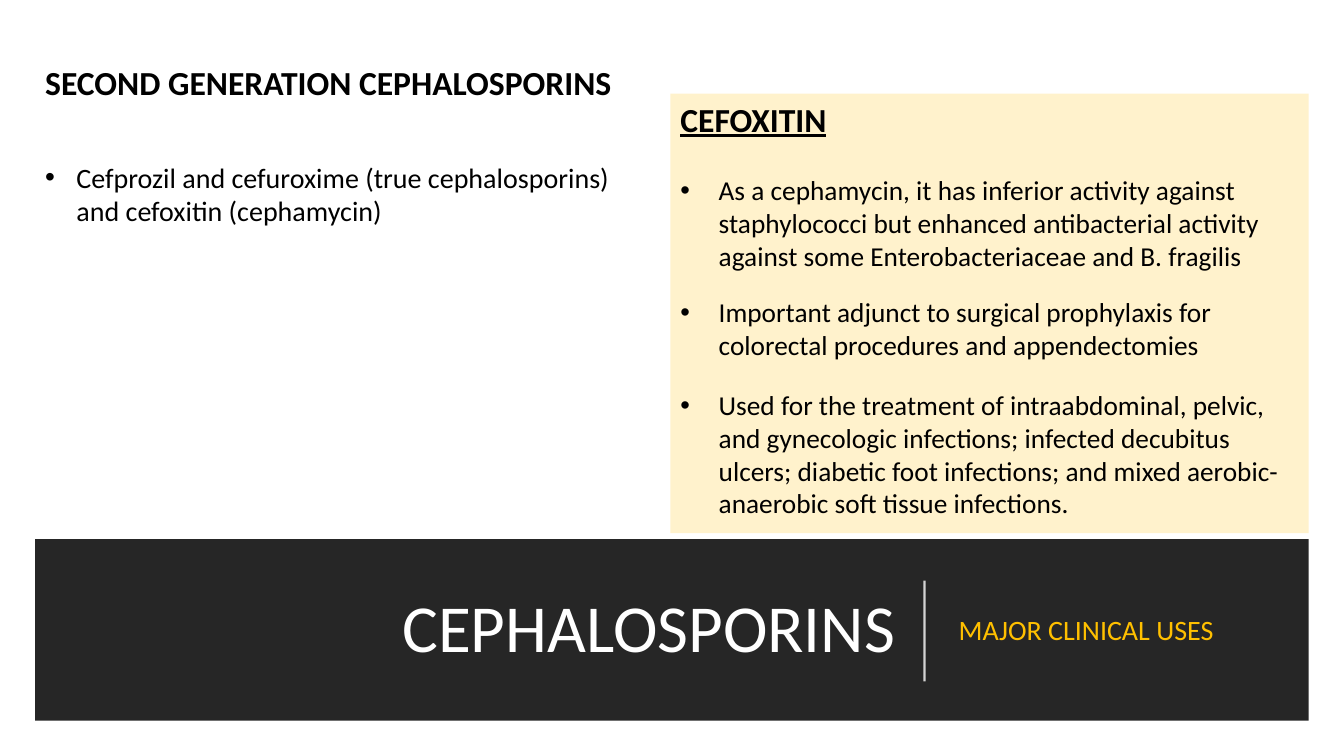
from lxml import etree
from pptx import Presentation
from pptx.dml.color import RGBColor
from pptx.enum.shapes import MSO_CONNECTOR, MSO_SHAPE
from pptx.enum.text import MSO_ANCHOR, MSO_AUTO_SIZE, PP_ALIGN
from pptx.oxml.ns import qn
from pptx.util import Inches, Pt

RECT, STRAIGHT = MSO_SHAPE.RECTANGLE, MSO_CONNECTOR.STRAIGHT
TOP, MIDDLE = MSO_ANCHOR.TOP, MSO_ANCHOR.MIDDLE
LEFT, RIGHT = PP_ALIGN.LEFT, PP_ALIGN.RIGHT
GROW, FIXED = MSO_AUTO_SIZE.SHAPE_TO_FIT_TEXT, MSO_AUTO_SIZE.NONE

BLACK, WHITE, BAND, CREAM, GOLD = "000000", "FFFFFF", "262626", "FFF2CC", "FFC000"
FONT = "Calibri"

# Each paragraph: (text, font values, paragraph values, bullet indent in inches)
TIGHT = {"line_spacing": 0.9}
TITLE = [("CEPHALOSPORINS", {"size": Pt(48)}, {**TIGHT, "alignment": RIGHT}, 0)]
SUBTITLE = [("MAJOR CLINICAL USES", {"size": Pt(20)},
             {**TIGHT, "space_before": Pt(10), "space_after": Pt(6)}, 0)]
GENERATION = [("SECOND GENERATION CEPHALOSPORINS", {"size": Pt(24), "bold": True},
               {**TIGHT, "space_before": Pt(10)}, 0)]
MEMBERS = [("Cefprozil and cefuroxime (true cephalosporins) and cefoxitin (cephamycin)",
            {"size": Pt(20)}, {}, 0.31)]
CEFOXITIN_USES = [
    ("As a cephamycin, it has inferior activity against staphylococci but enhanced "
     "antibacterial activity against some Enterobacteriaceae and B. fragilis", 24.4),
    ("Important adjunct to surgical prophylaxis for colorectal procedures and "
     "appendectomies", 17),
    ("Used for the treatment of intraabdominal, pelvic, and gynecologic infections; "
     "infected decubitus ulcers; diabetic foot infections; and mixed aerobic-anaerobic "
     "soft tissue infections.", 19.5),
]
CEFOXITIN = [("CEFOXITIN", {"size": Pt(24), "bold": True, "underline": True}, {}, 0)] + [
    (use, {"size": Pt(19.5)}, {"space_before": Pt(gap)}, 0.38)
    for use, gap in CEFOXITIN_USES]

# Layout in inches
WIDTH, HEIGHT, MARGIN = 13.33, 7.5, 0.35
BAND_TOP, BAND_HEIGHT = 5.35, 1.8
LABEL_TOP, LABEL_HEIGHT = 5.57, 1.38
DIVIDER_X, DIVIDER_TOP, DIVIDER_BOTTOM = 9.17, 5.76, 6.76
PANEL_LEFT, PANEL_TOP, PANEL_HEIGHT = 6.65, 0.93, 4.36
INNER_WIDTH = WIDTH - 2 * MARGIN


def rgb(hex_color):
    return RGBColor.from_string(hex_color)


def assign(target, values):
    for name, value in values.items():
        setattr(target, name, value)


def add_panel(slide, box, color):
    panel = slide.shapes.add_shape(RECT, *map(Inches, box))
    panel.shadow.inherit = False
    panel.fill.solid()
    panel.fill.fore_color.rgb = rgb(color)
    panel.line.fill.background()
    return panel


def set_bullet(paragraph, indent):
    properties = paragraph._p.get_or_add_pPr()
    properties.set("marL", str(Inches(indent)))
    properties.set("indent", str(-Inches(indent)))
    etree.SubElement(properties, qn("a:buFont")).set("typeface", "Arial")
    etree.SubElement(properties, qn("a:buChar")).set("char", "•")


def write(holder, paragraphs, color, anchor=TOP, auto_size=FIXED):
    frame = holder.text_frame
    assign(frame, {"word_wrap": True, "auto_size": auto_size, "vertical_anchor": anchor})
    for index, (text, font, layout, indent) in enumerate(paragraphs):
        paragraph = frame.add_paragraph() if index else frame.paragraphs[0]
        assign(paragraph, {"alignment": LEFT, **layout})
        if indent:
            set_bullet(paragraph, indent)
        run = paragraph.add_run()
        run.text = text
        assign(run.font, {"name": FONT, **font})
        run.font.color.rgb = rgb(color)


def add_text(slide, box, *content):
    write(slide.shapes.add_textbox(*map(Inches, box)), *content)


def add_divider(slide):
    ends = (DIVIDER_X, DIVIDER_BOTTOM, DIVIDER_X, DIVIDER_TOP)
    divider = slide.shapes.add_connector(STRAIGHT, *map(Inches, ends))
    divider.line.width = Pt(1.5)
    divider.line.color.rgb = rgb(WHITE)
    shade = divider.line.fill._xPr.find(".//" + qn("a:srgbClr"))
    etree.SubElement(shade, qn("a:alpha")).set("val", "80000")
    etree.SubElement(divider._element.spPr, qn("a:effectLst"))


def main():
    deck = Presentation()
    deck.slide_width, deck.slide_height = Inches(WIDTH), Inches(HEIGHT)
    slide = deck.slides.add_slide(deck.slide_layouts[6])

    add_panel(slide, (MARGIN, BAND_TOP, INNER_WIDTH, BAND_HEIGHT), BAND)
    add_text(slide, (0.79, LABEL_TOP, 8.19, LABEL_HEIGHT), TITLE, WHITE, MIDDLE)
    add_text(slide, (9.41, LABEL_TOP, 3.14, LABEL_HEIGHT), SUBTITLE, GOLD, MIDDLE)
    add_divider(slide)

    add_text(slide, (MARGIN, MARGIN, 11.84, 0.97), GENERATION, BLACK, MIDDLE)
    add_text(slide, (MARGIN, 1.54, 5.82, 0.77), MEMBERS, BLACK, TOP, GROW)
    panel_box = (PANEL_LEFT, PANEL_TOP, WIDTH - MARGIN - PANEL_LEFT, PANEL_HEIGHT)
    write(add_panel(slide, panel_box, CREAM), CEFOXITIN, BLACK, TOP, GROW)

    deck.save("out.pptx")


if __name__ == "__main__":
    main()
